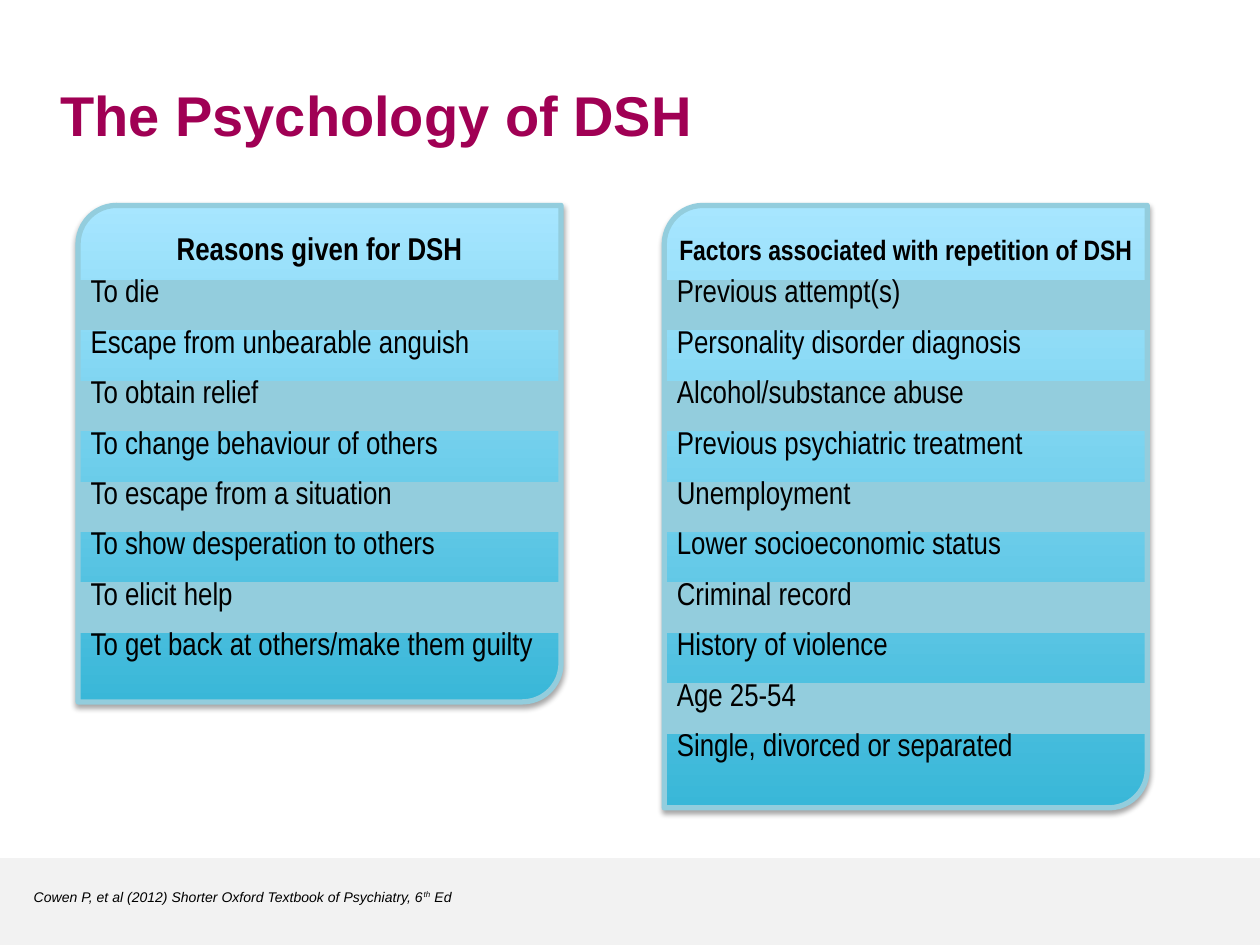
from dataclasses import dataclass

from lxml.etree import SubElement
from pptx import Presentation
from pptx.dml.color import RGBColor
from pptx.enum.shapes import MSO_SHAPE
from pptx.enum.text import MSO_ANCHOR, PP_ALIGN
from pptx.oxml.ns import qn
from pptx.shapes.autoshape import Shape
from pptx.slide import Slide
from pptx.text.text import Font
from pptx.util import Pt

BLACK = RGBColor(0x00, 0x00, 0x00)
PLUM = RGBColor(0xA0, 0x00, 0x54)
FOOTER_GREY = RGBColor(0xF2, 0xF2, 0xF2)
BAND_BLUE = RGBColor(0x93, 0xCD, 0xDD)
DEEP_BLUE = RGBColor(0x39, 0xB7, 0xD8)
PALE_BLUE = RGBColor(0xA7, 0xE6, 0xFF)

NO_GRID_STYLE = "{2D5ABB26-0587-4C30-8999-92F81FD0307C}"
CARD_TOP, CARD_WIDTH = 117.4, 276
TABLE_TOP, ROW_HEIGHT = 160, 28.8


@dataclass
class Card:
    left: float
    height: float
    heading: str
    heading_top: float
    heading_size: float
    rows: list[str]


CARDS = [
    Card(44.6, 283.7, "Reasons given for DSH", 127.4, 18, [
        "To die",
        "Escape from unbearable anguish",
        "To obtain relief",
        "To change behaviour of others",
        "To escape from a situation",
        "To show desperation to others",
        "To elicit help",
        "To get back at others/make them guilty",
    ]),
    Card(379.6, 344.2, "Factors associated with repetition of DSH", 129.6, 16, [
        "Previous attempt(s)",
        "Personality disorder diagnosis",
        "Alcohol/substance abuse",
        "Previous psychiatric treatment",
        "Unemployment",
        "Lower socioeconomic status",
        "Criminal record",
        "History of violence",
        "Age 25-54",
        "Single, divorced or separated",
    ]),
]


def style_font(font: Font, name: str, size: float, color: RGBColor = BLACK,
               bold: bool = False, italic: bool = False) -> None:
    font.name, font.size, font.bold, font.italic = name, Pt(size), bold, italic
    font.color.rgb = color


def add_text_box(page: Slide, left: float, top: float, width: float,
                 height: float, text: str) -> Shape:
    box = page.shapes.add_textbox(Pt(left), Pt(top), Pt(width), Pt(height))
    box.text_frame.word_wrap = True
    box.text_frame.text = text
    return box


def add_soft_shadow(shape: Shape) -> None:
    shape.shadow.inherit = False
    effects = shape._element.spPr.find(qn("a:effectLst"))
    shadow = SubElement(effects, qn("a:outerShdw"), blurRad=str(Pt(3.1)),
                        dist=str(Pt(1.8)), dir="5400000", rotWithShape="0")
    color = SubElement(shadow, qn("a:srgbClr"), val=str(BLACK))
    SubElement(color, qn("a:alpha"), val="35000")


def add_panel(page: Slide, card: Card) -> None:
    panel = page.shapes.add_shape(
        MSO_SHAPE.ROUND_2_DIAG_RECTANGLE, Pt(card.left), Pt(CARD_TOP),
        Pt(CARD_WIDTH), Pt(card.height))
    panel.adjustments[0], panel.adjustments[1] = 0.08, 0
    panel.fill.gradient()
    panel.fill.gradient_angle = 90
    for stop, color, position in zip(panel.fill.gradient_stops,
                                     (DEEP_BLUE, PALE_BLUE), (0, 1)):
        stop.color.rgb, stop.position = color, position
    panel.line.color.rgb = BAND_BLUE
    panel.line.width = Pt(3)
    add_soft_shadow(panel)


def add_heading(page: Slide, card: Card) -> None:
    box = add_text_box(page, card.left, card.heading_top, CARD_WIDTH, 35.3,
                       card.heading)
    box.text_frame.margin_left = box.text_frame.margin_right = Pt(3)
    para = box.text_frame.paragraphs[0]
    para.alignment = PP_ALIGN.CENTER
    style_font(para.font, "Arial Narrow", card.heading_size, bold=True)


def add_rows(page: Slide, card: Card) -> None:
    count = len(card.rows)
    table = page.shapes.add_table(
        count, 1, Pt(card.left), Pt(TABLE_TOP), Pt(CARD_WIDTH),
        Pt(ROW_HEIGHT * count)).table
    table.first_row = table.horz_banding = False
    table._tbl.tblPr.find(qn("a:tableStyleId")).text = NO_GRID_STYLE
    for index, text in enumerate(card.rows):
        table.rows[index].height = Pt(ROW_HEIGHT)
        cell = table.cell(index, 0)
        cell.text = text
        cell.margin_top = cell.margin_bottom = 0
        style_font(cell.text_frame.paragraphs[0].font, "Arial Narrow", 18)
        if index % 2 == 0:
            cell.fill.solid()
            cell.fill.fore_color.rgb = BAND_BLUE
        else:
            cell.fill.background()


def add_footer(page: Slide) -> None:
    band = page.shapes.add_shape(MSO_SHAPE.RECTANGLE, 0, Pt(490.3),
                                 Pt(720), Pt(49.7))
    band.shadow.inherit = False
    band.fill.solid()
    band.fill.fore_color.rgb = FOOTER_GREY
    band.line.fill.background()

    box = add_text_box(
        page, 12.2, 504, 602, 17.3,
        "Cowen P, et al (2012) Shorter Oxford Textbook of Psychiatry, 6")
    para = box.text_frame.paragraphs[0]
    style_font(para.font, "Arial", 8, italic=True)
    ordinal = para.add_run()
    ordinal.text = "th"
    ordinal.font._element.set("baseline", "30000")
    para.add_run().text = " Ed"


def add_title(page: Slide) -> None:
    box = add_text_box(page, 27.4, 39.6, 648, 51.1, "The Psychology of DSH")
    box.text_frame.vertical_anchor = MSO_ANCHOR.MIDDLE
    style_font(box.text_frame.paragraphs[0].font, "Arial", 32, PLUM, bold=True)


def main() -> None:
    deck = Presentation()
    deck.slide_width, deck.slide_height = Pt(720), Pt(540)
    page = deck.slides.add_slide(deck.slide_layouts[6])

    # Footer band with citation, then title
    add_footer(page)
    add_title(page)

    # Two cards: panel, heading and striped rows
    for card in CARDS:
        add_panel(page, card)
        add_heading(page, card)
        add_rows(page, card)

    deck.save("out.pptx")


if __name__ == "__main__":
    main()
